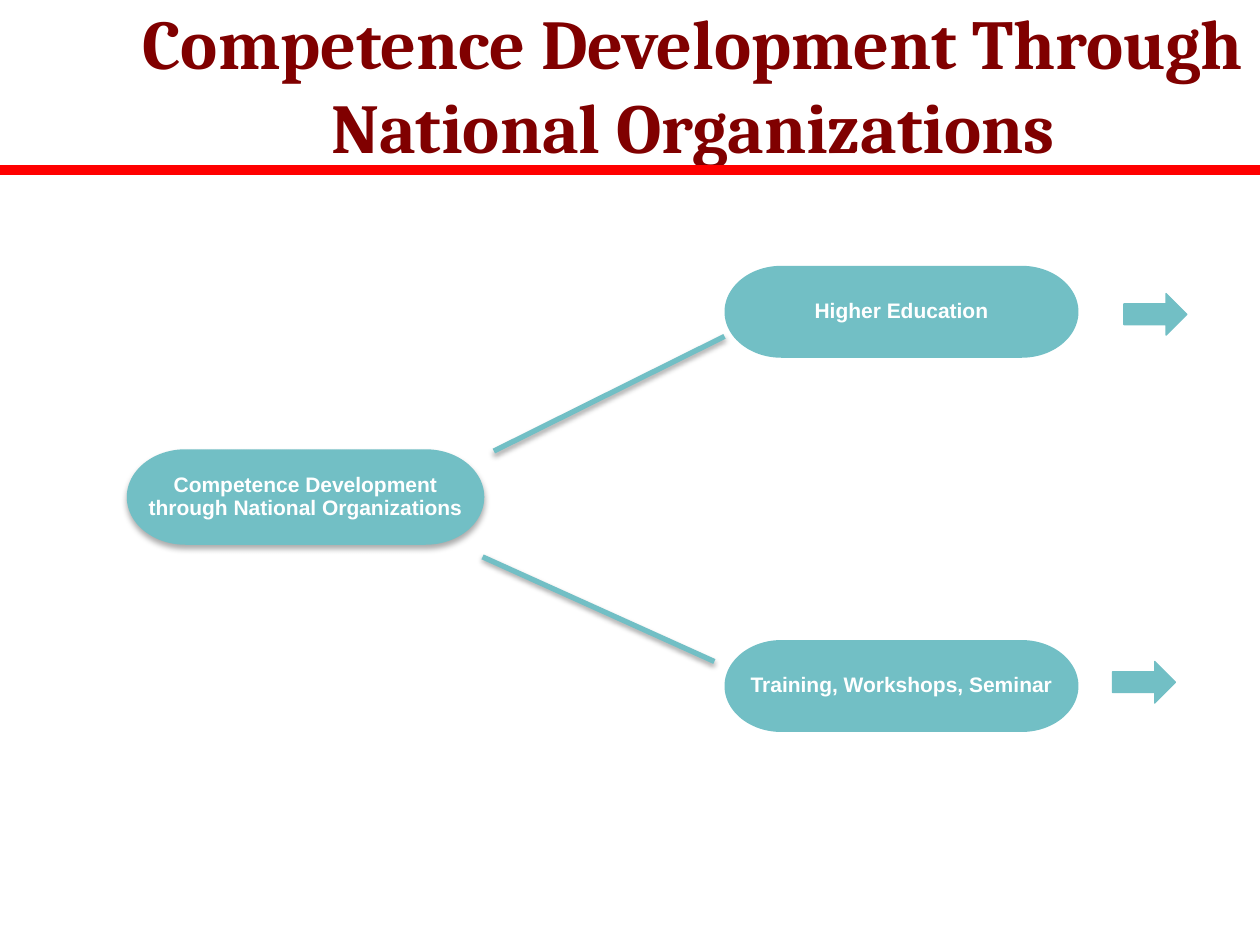
from lxml import etree
from pptx import Presentation
from pptx.dml.color import RGBColor
from pptx.enum.shapes import MSO_CONNECTOR, MSO_SHAPE
from pptx.enum.text import MSO_ANCHOR, MSO_AUTO_SIZE, PP_ALIGN
from pptx.oxml.ns import qn
from pptx.util import Inches, Pt

PILL, ARROW = MSO_SHAPE.FLOWCHART_TERMINATOR, MSO_SHAPE.RIGHT_ARROW
STRAIGHT = MSO_CONNECTOR.STRAIGHT
MIDDLE, CENTER = MSO_ANCHOR.MIDDLE, PP_ALIGN.CENTER
TEAL, RED, MAROON, WHITE = "72BFC5", "FF0000", "800000", "FFFFFF"

TITLE = "Competence Development Through National Organizations"
# text, left, top, outline width, shadow (opacity %, blur pt, distance pt)
PILLS = [
    ("Higher Education", 5.75, 2.11, 0, None),
    ("Training, Workshops, Seminar", 5.75, 5.08, 0, None),
    ("Competence Development through National Organizations",
     1.02, 3.58, 2, (32, 3.5, 2.2)),
]
# start, end, colour, width, shadow
LINES = [
    ((0, 1.35), (10, 1.35), RED, 6, None),
    ((3.92, 3.58), (5.75, 2.67), TEAL, 3, (35, 3.1, 1.8)),
    ((3.83, 4.42), (5.67, 5.25), TEAL, 3, (35, 3.1, 1.8)),
]
ARROWS = [(8.83, 5.25), (8.92, 2.33)]
PILL_SIZE, ARROW_SIZE = (2.81, 0.73), (0.5, 0.33)


def color(hex_code):
    return RGBColor.from_string(hex_code)


def set_shadow(shape, shadow):
    """Give the shape a downward shadow, or an empty effect list for none."""
    effects = etree.SubElement(shape._element.spPr, qn("a:effectLst"))
    if shadow:
        alpha, blur, dist = shadow
        outer = etree.SubElement(
            effects, qn("a:outerShdw"), blurRad=str(Pt(blur)),
            dist=str(Pt(dist)), dir="5400000", rotWithShape="0")
        black = etree.SubElement(outer, qn("a:srgbClr"), val="000000")
        etree.SubElement(black, qn("a:alpha"), val=str(alpha * 1000))


def set_text(shape, text, inset, font, **para_format):
    frame = shape.text_frame
    frame.text = text
    box = dict(word_wrap=True, auto_size=MSO_AUTO_SIZE.NONE,
               vertical_anchor=MIDDLE)
    for side in ("left", "right", "top", "bottom"):
        box[f"margin_{side}"] = Inches(inset)
    para = frame.paragraphs[0]
    para_format["alignment"] = CENTER
    name, size, ink = font
    font_format = dict(name=name, size=Pt(size), bold=True)
    for target, values in ((frame, box), (para, para_format),
                           (para.font, font_format)):
        for key, value in values.items():
            setattr(target, key, value)
    para.font.color.rgb = color(ink)


def add_teal(slide, kind, spot, size, line, shadow=None):
    shape = slide.shapes.add_shape(kind, *map(Inches, spot + size))
    shape.fill.solid()
    shape.fill.fore_color.rgb = color(TEAL)
    if line:
        shape.line.color.rgb = color(TEAL)
        shape.line.width = Pt(line)
    else:
        shape.line.fill.background()
    set_shadow(shape, shadow)
    return shape


def add_line(slide, start, end, ink, width, shadow):
    line = slide.shapes.add_connector(STRAIGHT, *map(Inches, start + end))
    line.line.color.rgb = color(ink)
    line.line.width = Pt(width)
    set_shadow(line, shadow)


def main():
    prs = Presentation()
    prs.slide_width, prs.slide_height = Inches(10), Inches(7.5)
    slide = prs.slides.add_slide(prs.slide_layouts[5])

    title = slide.shapes.title
    title.left, title.top = Inches(1), Inches(0.33)
    title.width, title.height = Inches(9), Inches(0.67)
    set_text(title, TITLE, 0.05, ("Cambria", 40, MAROON))

    for text, left, top, line, shadow in PILLS:
        pill = add_teal(slide, PILL, (left, top), PILL_SIZE, line, shadow)
        set_text(pill, text, 0.01, ("Arial", 12, WHITE), line_spacing=0.9)
    for line in LINES:
        add_line(slide, *line)
    for spot in ARROWS:
        add_teal(slide, ARROW, spot, ARROW_SIZE, 0.75)

    prs.save("out.pptx")


if __name__ == "__main__":
    main()
